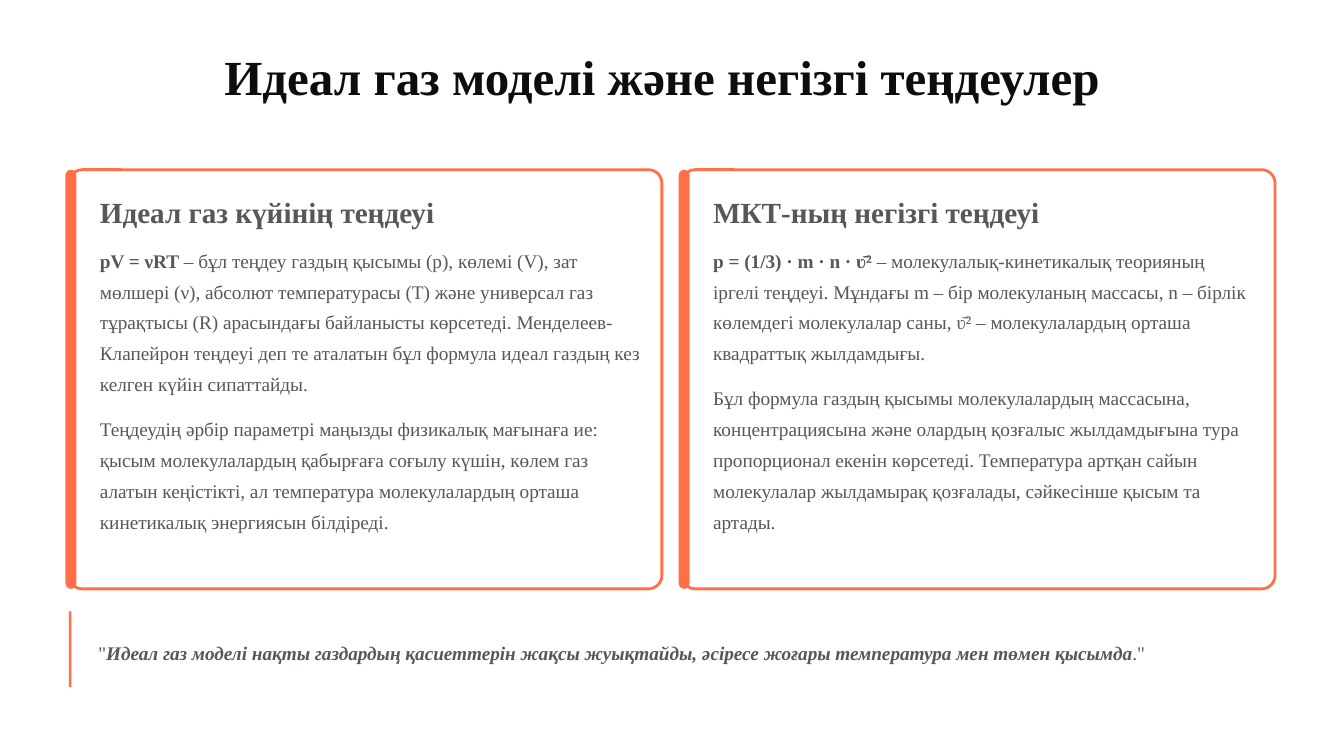
from pptx import Presentation
from pptx.dml.color import RGBColor
from pptx.enum import shapes, text
from pptx.util import Inches, Pt

FONT = "Times New Roman"
COLORS = {"paper": "FFFFFF", "accent": "FF7047", "title": "0C0D0F", "body": "55575A"}

TITLE = "Идеал газ моделі және негізгі теңдеулер"
# Each card: heading, then paragraphs as (height, [(text, emphasised), ...])
CARDS = [
    ("Идеал газ күйінің теңдеуі", [
        (1.87, [("pV = νRT", True),
                (" – бұл теңдеу газдың қысымы (p), көлемі (V), зат мөлшері (ν), абсолют "
                 "температурасы (T) және универсал газ тұрақтысы (R) арасындағы байланысты "
                 "көрсетеді. Менделеев-Клапейрон теңдеуі деп те аталатын бұл формула идеал "
                 "газдың кез келген күйін сипаттайды.", False)]),
        (1.87, [("Теңдеудің әрбір параметрі маңызды физикалық мағынаға ие: қысым "
                 "молекулалардың қабырғаға соғылу күшін, көлем газ алатын кеңістікті, ал "
                 "температура молекулалардың орташа кинетикалық энергиясын білдіреді.", False)]),
    ]),
    ("МКТ-ның негізгі теңдеуі", [
        (1.5, [("p = (1/3) · m · n · ʋ̄²", True),
               (" – молекулалық-кинетикалық теорияның іргелі теңдеуі. Мұндағы m – бір "
                "молекуланың массасы, n – бірлік көлемдегі молекулалар саны, ʋ̄² – "
                "молекулалардың орташа квадраттық жылдамдығы.", False)]),
        (1.87, [("Бұл формула газдың қысымы молекулалардың массасына, концентрациясына және "
                 "олардың қозғалыс жылдамдығына тура пропорционал екенін көрсетеді. "
                 "Температура артқан сайын молекулалар жылдамырақ қозғалады, сәйкесінше "
                 "қысым та артады.", False)]),
    ]),
]
QUOTE = [
    ('"', False),
    ("Идеал газ моделі нақты газдардың қасиеттерін жақсы жуықтайды, әсіресе жоғары "
     "температура мен төмен қысымда", True),
    ('."', False),
]


def color(name):
    return RGBColor.from_string(COLORS[name])


def place(shape, left, top, width, height):
    shape.left, shape.top = Inches(left), Inches(top)
    shape.width, shape.height = Inches(width), Inches(height)


def write(shape, runs, size, spacing, ink="body", bold=None, italic=False):
    """Fill a shape with one paragraph; emphasised runs are bold, optionally italic."""
    frame = shape.text_frame
    frame.word_wrap = True
    frame.auto_size = text.MSO_AUTO_SIZE.NONE
    frame.vertical_anchor = text.MSO_ANCHOR.TOP
    frame.margin_left = frame.margin_right = frame.margin_top = frame.margin_bottom = 0
    paragraph = frame.paragraphs[0]
    paragraph.line_spacing = Pt(spacing)
    paragraph.font.name, paragraph.font.size = FONT, Pt(size)
    paragraph.font.color.rgb = color(ink)
    paragraph.font.bold = bold
    for words, emphasised in runs:
        run = paragraph.add_run()
        run.text = words
        if emphasised:
            run.font.bold = True
            run.font.italic = italic or None
    return paragraph


def add_text(slide, box, runs, size, spacing, **style):
    shape = slide.shapes.add_textbox(*map(Inches, box))
    return write(shape, runs, size, spacing, **style)


def add_block(slide, kind, box, fill, corner=None, outline=None):
    shape = slide.shapes.add_shape(kind, *map(Inches, box))
    shape.shadow.inherit = False
    shape.fill.solid()
    shape.fill.fore_color.rgb = color(fill)
    if corner is not None:
        shape.adjustments[0] = corner
    if outline:
        shape.line.color.rgb = color(outline)
        shape.line.width = Pt(2.4)
    else:
        shape.line.fill.background()


def add_title(slide, left, top, width, height):
    title = slide.shapes.title
    place(title, left, top, width, height)
    paragraph = write(title, [(TITLE, False)], 42, 52.5, ink="title", bold=True)
    paragraph.alignment = text.PP_ALIGN.CENTER


def add_card(slide, left, top, width, height, heading, paragraphs):
    # Frame with the accent bar over its left edge
    rounded = shapes.MSO_SHAPE.ROUNDED_RECTANGLE
    add_block(slide, rounded, (left, top, width, height), "paper", 0.032, "accent")
    add_block(slide, rounded, (left - 0.04, top, 0.13, height), "accent", 0.5)

    # Heading and stacked paragraphs
    text_left, text_width = left + 0.37, width - 0.63
    add_text(slide, (text_left, top + 0.27, text_width, 0.44), [(heading, False)],
             25, 31.5, bold=True)
    text_top = top + 0.85
    for text_height, runs in paragraphs:
        add_text(slide, (text_left, text_top, text_width, text_height), runs, 16.5, 26.5)
        text_top += text_height + 0.14


def add_quote(slide, left, top, width, height):
    add_text(slide, (left + 0.35, top + 0.26, width - 0.35, 0.37), QUOTE,
             16.5, 26.5, italic=True)
    add_block(slide, shapes.MSO_SHAPE.RECTANGLE, (left, top, 0.03, height), "accent")


def main():
    presentation = Presentation()
    presentation.slide_width, presentation.slide_height = Inches(16), Inches(9)
    slide = presentation.slides.add_slide(presentation.slide_layouts.get_by_name("Title Only"))
    slide.background.fill.solid()
    slide.background.fill.fore_color.rgb = color("paper")

    left, card_width, gap = 0.82, 7.06, 0.24
    add_title(slide, 2.35, 0.53, 11.07, 0.73)
    for column, (heading, paragraphs) in enumerate(CARDS):
        card_left = left + column * (card_width + gap)
        add_card(slide, card_left, 2.02, card_width, 4.99, heading, paragraphs)
    add_quote(slide, left, 7.28, 2 * card_width + gap, 0.9)

    presentation.save("out.pptx")


if __name__ == "__main__":
    main()
